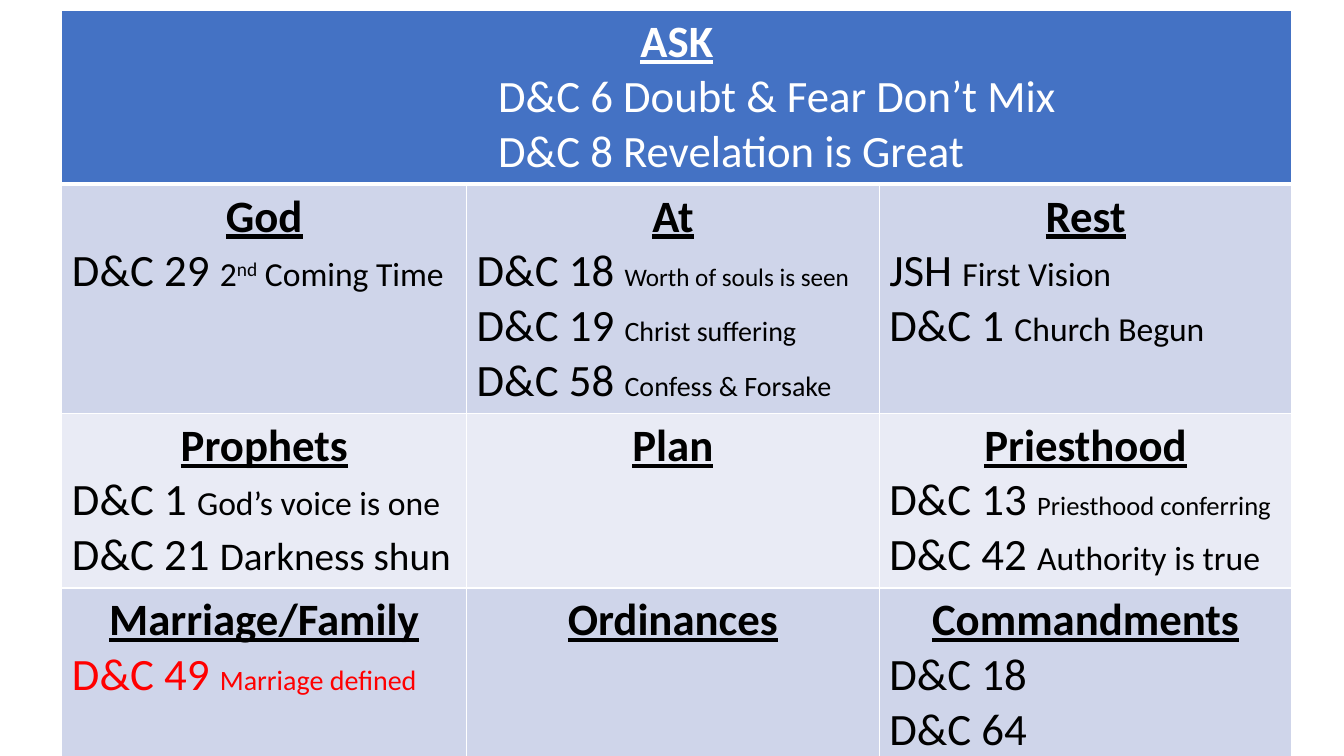
"""Build a table slide that sorts scripture references under gospel topics."""
from dataclasses import dataclass

from lxml import etree
from pptx import Presentation
from pptx import util as u
from pptx.dml.color import RGBColor
from pptx.enum import text
from pptx.oxml.ns import qn

COLORS = {
    "header": "4472C4", "band": "CFD5EA", "light_band": "E9EBF5",
    "border": "FFFFFF", "header_text": "FFFFFF", "body_text": "000000",
    "highlight": "FF0000",
}
FONT = "Calibri"
LARGE = 32


@dataclass(frozen=True)
class Part:
    words: str
    size: float = LARGE
    raised: bool = False


@dataclass(frozen=True)
class Topic:
    title: str
    references: tuple[tuple[Part, ...], ...] = ()
    color: str = "body_text"
    reference_color: str = "body_text"
    indent: float = 0


def ref(source: str, summary: str = "", size: float = 24) -> tuple[Part, ...]:
    if not summary:
        return (Part(source),)
    return Part(source + " "), Part(summary, size)


ASK = Topic(
    "ASK",
    (ref("D&C 6 Doubt & Fear Don’t Mix"), ref("D&C 8 Revelation is Great")),
    "header_text", "header_text", 10.74,
)
TOPIC_ROWS = (
    (
        Topic("God", ((Part("D&C 29 "), Part("2", 24), Part("nd", 24, True),
                       Part(" Coming Time", 24)),)),
        Topic("At", (ref("D&C 18", "Worth of souls is seen", 18),
                     ref("D&C 19", "Christ suffering", 20),
                     ref("D&C 58", "Confess & Forsake", 20))),
        Topic("Rest", (ref("JSH", "First Vision"), ref("D&C 1", "Church Begun"))),
    ),
    (
        Topic("Prophets", (ref("D&C 1", "God’s voice is one"),
                           ref("D&C 21", "Darkness shun", 28))),
        Topic("Plan"),
        Topic("Priesthood", (ref("D&C 13", "Priesthood conferring", 19),
                             ref("D&C 42", "Authority is true"))),
    ),
    (
        Topic("Marriage/Family", (ref("D&C 49", "Marriage defined", 20),),
              reference_color="highlight"),
        Topic("Ordinances"),
        Topic("Commandments", (ref("D&C 18"), ref("D&C 64"))),
    ),
)
COLUMN_WIDTHS = (10.2, 10.4, 10.4)
ROW_HEIGHT = 4.24


def add_part(paragraph, part: Part, color: str, heading: bool = False) -> None:
    run = paragraph.add_run()
    run.text = part.words
    run.font.name = FONT
    run.font.size = u.Pt(part.size)
    run.font.bold = run.font.underline = heading
    run.font.color.rgb = RGBColor.from_string(COLORS[color])
    if part.raised:
        run._r.get_or_add_rPr().set("baseline", "30000")


def write_topic(cell, topic: Topic) -> None:
    heading = cell.text_frame.paragraphs[0]
    heading.alignment = text.PP_ALIGN.CENTER
    add_part(heading, Part(topic.title), topic.color, heading=True)
    for reference in topic.references:
        line = cell.text_frame.add_paragraph()
        line.alignment = text.PP_ALIGN.LEFT
        if topic.indent:
            line._p.get_or_add_pPr().set("marL", str(u.Cm(topic.indent)))
        for part in reference:
            add_part(line, part, topic.reference_color)


def style_cell(cell, fill: str, top: float = 1, bottom: float = 1) -> None:
    properties = cell._tc.get_or_add_tcPr()
    for side, width in (("L", 1), ("R", 1), ("T", top), ("B", bottom)):
        border = etree.SubElement(properties, qn(f"a:ln{side}"), w=str(u.Pt(width)))
        solid = etree.SubElement(border, qn("a:solidFill"))
        etree.SubElement(solid, qn("a:srgbClr"), val=COLORS["border"])
    cell.fill.solid()
    cell.fill.fore_color.rgb = RGBColor.from_string(COLORS[fill])


def main() -> None:
    deck = Presentation()
    deck.slide_width, deck.slide_height = u.Cm(33.87), u.Cm(19.05)
    slide = deck.slides.add_slide(deck.slide_layouts[6])
    row_count = len(TOPIC_ROWS) + 1
    topics = slide.shapes.add_table(
        row_count, len(COLUMN_WIDTHS), u.Cm(1.56), u.Cm(0.25),
        u.Cm(sum(COLUMN_WIDTHS)), u.Cm(ROW_HEIGHT * row_count),
    ).table
    for column, width in zip(topics.columns, COLUMN_WIDTHS):
        column.width = u.Cm(width)

    for cell in topics.rows[0].cells:
        style_cell(cell, "header", bottom=3)
    topics.cell(0, 0).merge(topics.cell(0, len(COLUMN_WIDTHS) - 1))
    write_topic(topics.cell(0, 0), ASK)

    for row, row_topics in enumerate(TOPIC_ROWS, start=1):
        for column, topic in enumerate(row_topics):
            cell = topics.cell(row, column)
            style_cell(cell, "band" if row % 2 else "light_band",
                       top=3 if row == 1 else 1)
            write_topic(cell, topic)
    deck.save("out.pptx")


if __name__ == "__main__":
    main()
